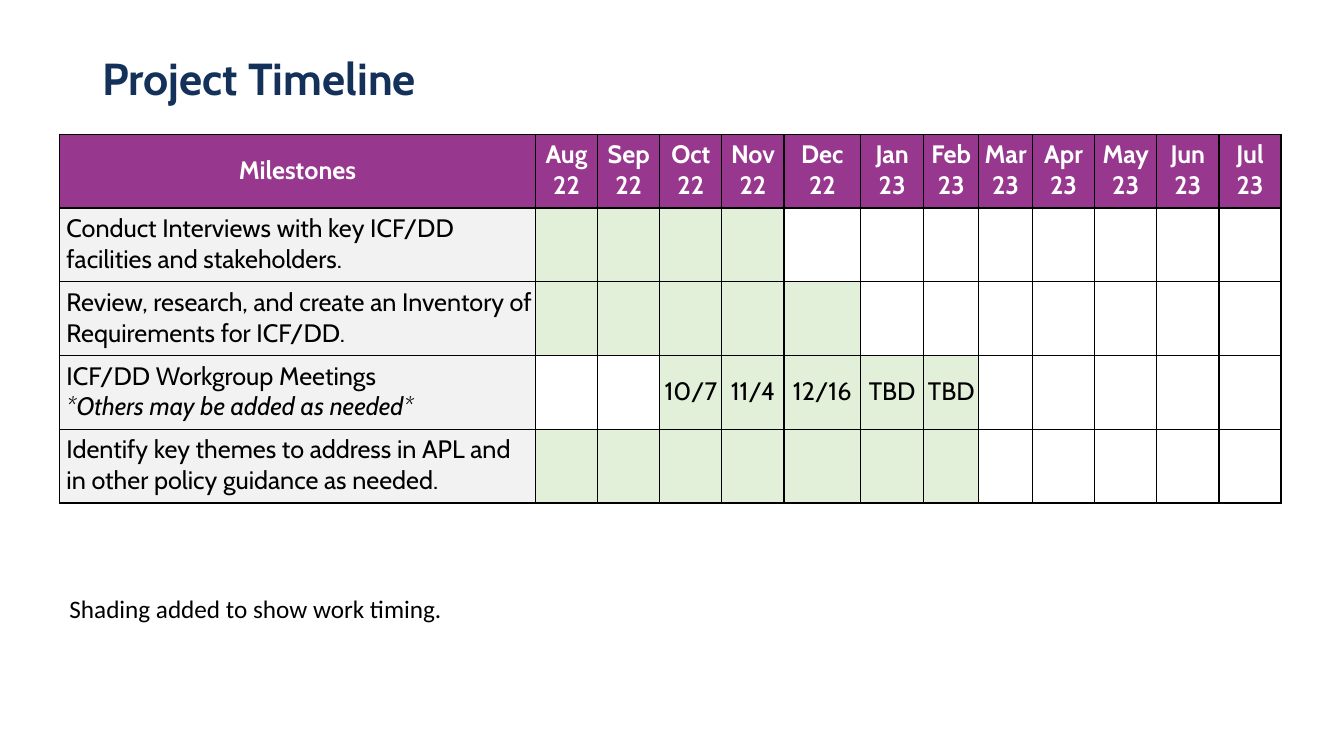
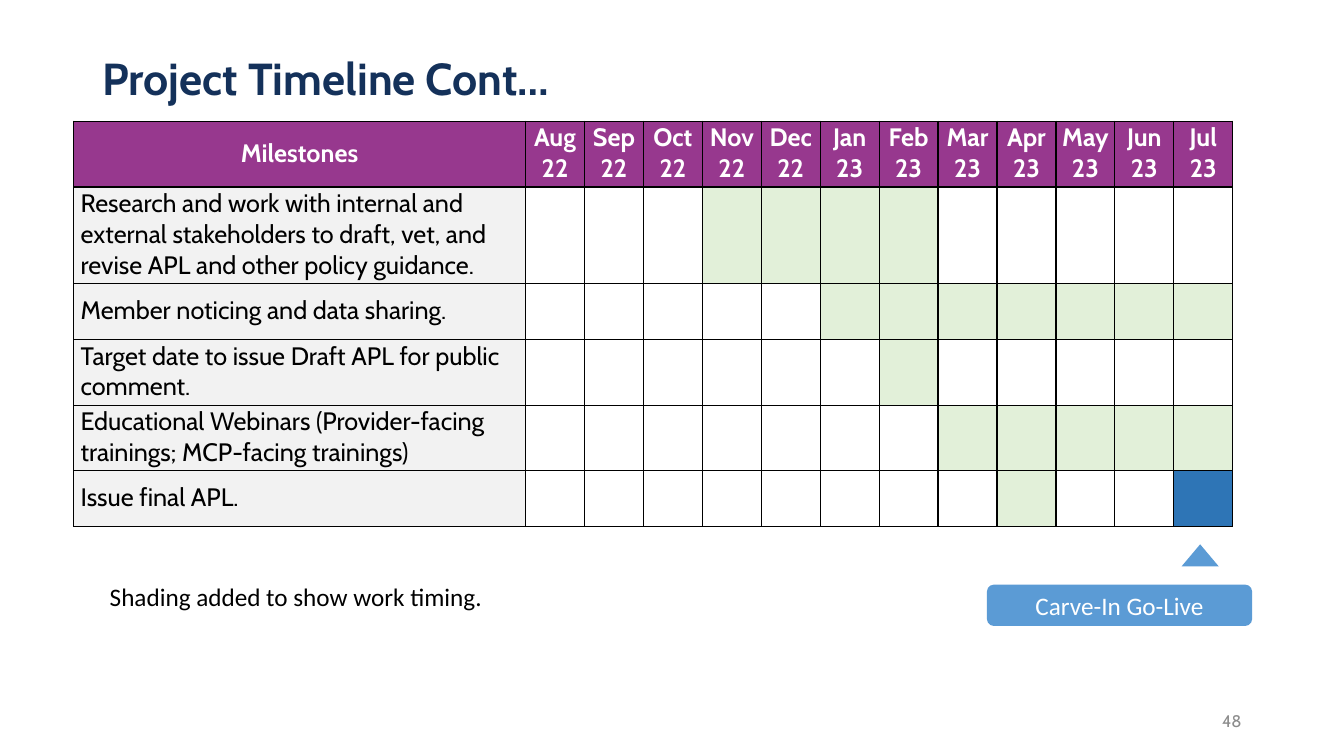
"""Build two project timeline slides with month-by-month milestone tables."""
from dataclasses import dataclass, field

from lxml import etree
from pptx import Presentation
from pptx import util as u
from pptx.dml import color
from pptx.enum import shapes, text
from pptx.oxml import ns

COLORS = {
    "title": "14315A",
    "header": "97388E",
    "label": "F2F2F2",
    "work": "E2F0D9",
    "go_live": "2E75B6",
    "callout": "5B9BD5",
    "number": "8C8C8C",
    "black": "000000",
    "white": "FFFFFF",
}
HEADING_FONT, NOTE_FONT = "Cabin", "Calibri"
TITLE_BOX = (66, 6, 828, 104)
TITLE_ONLY_LAYOUT = 5
CENTER, LEFT, RIGHT = text.PP_ALIGN.CENTER, text.PP_ALIGN.LEFT, text.PP_ALIGN.RIGHT
MIDDLE = text.MSO_ANCHOR.MIDDLE
CELL_FORMAT = {
    "margin_left": u.Pt(0.7),
    "margin_right": u.Pt(0.7),
    "margin_top": u.Pt(0.7),
    "margin_bottom": u.Pt(2),
    "vertical_anchor": MIDDLE,
}
MONTHS = [f"{month}\n22" for month in "Aug Sep Oct Nov Dec".split()]
MONTHS += [f"{month}\n23" for month in "Jan Feb Mar Apr May Jun Jul".split()]


@dataclass
class Milestone:
    """Hold one table row: label, shaded months and dated months."""
    label: str
    first: str
    last: str
    dates: dict = field(default_factory=dict)
    go_live: str = ""


FIRST_MILESTONES = [
    Milestone("Conduct Interviews with key ICF/DD facilities and stakeholders.", "Aug", "Nov"),
    Milestone("Review, research, and create an Inventory of Requirements for ICF/DD.", "Aug", "Dec"),
    Milestone("ICF/DD Workgroup Meetings\n*Others may be added as needed*", "Oct", "Feb",
              {"Oct": "10/7", "Nov": "11/4", "Dec": "12/16", "Jan": "TBD", "Feb": "TBD"}),
    Milestone("Identify key themes to address in APL and in other policy guidance as needed.",
              "Aug", "Feb"),
]
SECOND_MILESTONES = [
    Milestone("Research and work with internal and external stakeholders to draft, vet, "
              "and revise APL and other policy guidance.", "Nov", "Feb"),
    Milestone("Member noticing and data sharing.", "Jan", "Jul"),
    Milestone("Target date to issue Draft APL for public comment.", "Feb", "Feb"),
    Milestone("Educational Webinars (Provider-facing trainings; MCP-facing trainings)",
              "Mar", "Jul"),
    Milestone("Issue final APL.", "Apr", "Apr", go_live="Jul"),
]


def rgb(name):
    """Return the named colour."""
    return color.RGBColor.from_string(COLORS[name])


def points(values):
    """Convert numbers to point lengths."""
    return [u.Pt(value) for value in values]


def apply_format(target, values):
    """Set attributes from a dict of format values."""
    for name, value in values.items():
        setattr(target, name, value)


def write(frame, content, size, font, ink, alignment=LEFT, bold=False):
    """Write text into a frame, with starred lines in italics."""
    paragraph = frame.paragraphs[0]
    paragraph.alignment = alignment
    for index, line in enumerate(content.split("\n")):
        if index:
            paragraph.add_line_break()
        run = paragraph.add_run()
        run.text = line
        apply_format(run.font, {"size": u.Pt(size), "name": font, "bold": bold,
                                "italic": line.startswith("*")})
        run.font.color.rgb = rgb(ink)
    return paragraph


def add_title_slide(presentation, title):
    """Add a slide with the shared title style."""
    slide = presentation.slides.add_slide(presentation.slide_layouts[TITLE_ONLY_LAYOUT])
    shape = slide.shapes.title
    apply_format(shape, dict(zip(("left", "top", "width", "height"), points(TITLE_BOX))))
    shape.text_frame.vertical_anchor = MIDDLE
    paragraph = write(shape.text_frame, title, 32, HEADING_FONT, "title", bold=True)
    paragraph.line_spacing = 0.9
    return slide


def add_text(slide, box, content, size, font, ink, alignment=LEFT, anchor=text.MSO_ANCHOR.TOP):
    """Add a wrapped text box."""
    frame = slide.shapes.add_textbox(*points(box)).text_frame
    apply_format(frame, {"word_wrap": True, "vertical_anchor": anchor})
    write(frame, content, size, font, ink, alignment)


def add_shading_note(slide, box):
    """Add the note that explains the shading."""
    add_text(slide, box, "Shading added to show work timing.", 18, NOTE_FONT, "black")


def format_cell(cell, fill, content="", ink="black", alignment=CENTER, bold=False):
    """Give a cell its borders, fill and text."""
    apply_format(cell, CELL_FORMAT)
    properties = cell._tc.get_or_add_tcPr()
    for side in ("lnL", "lnR", "lnT", "lnB"):
        line = etree.SubElement(properties, ns.qn(f"a:{side}"), w=str(u.Pt(1)))
        solid = etree.SubElement(line, ns.qn("a:solidFill"))
        etree.SubElement(solid, ns.qn("a:srgbClr"), val=COLORS["black"])
    cell.fill.solid()
    cell.fill.fore_color.rgb = rgb(fill)
    if content:
        write(cell.text_frame, content, 18, HEADING_FONT, ink, alignment, bold)


def add_timeline(slide, origin, columns, rows, milestones):
    """Add the milestone table at its top left corner."""
    box = (*origin, sum(columns), sum(rows))
    table = slide.shapes.add_table(len(rows), len(columns), *points(box)).table
    table.horz_banding = False
    for column, width in zip(table.columns, columns):
        column.width = u.Pt(width)
    for row, height in zip(table.rows, rows):
        row.height = u.Pt(height)
    for index, heading in enumerate(["Milestones", *MONTHS]):
        format_cell(table.cell(0, index), "header", heading, "white", bold=True)
    names = [month[:3] for month in MONTHS]
    for row, milestone in enumerate(milestones, 1):
        label = table.cell(row, 0)
        format_cell(label, "label", milestone.label, alignment=LEFT)
        label.margin_left = u.Pt(5)
        active = names[names.index(milestone.first):names.index(milestone.last) + 1]
        for column, name in enumerate(names, 1):
            fill = "work" if name in active else "white"
            if name == milestone.go_live:
                fill = "go_live"
            format_cell(table.cell(row, column), fill, milestone.dates.get(name, ""))


def add_go_live_callout(slide, box):
    """Add the go-live label with its pointer, inside the given box."""
    left, top, width, height = box
    parts = [
        (shapes.MSO_SHAPE.ISOSCELES_TRIANGLE, (left + 139, top, 26.6, 15.8), ""),
        (shapes.MSO_SHAPE.ROUNDED_RECTANGLE, (left, top + 28.8, width, height - 28.8),
         "Carve-In Go-Live"),
    ]
    for kind, part_box, content in parts:
        shape = slide.shapes.add_shape(kind, *points(part_box))
        shape.shadow.inherit = False
        shape.fill.solid()
        shape.fill.fore_color.rgb = rgb("callout")
        shape.line.fill.background()
        if content:
            shape.text_frame.vertical_anchor = MIDDLE
            write(shape.text_frame, content, 18, NOTE_FONT, "white", CENTER)


def build_first_slide(presentation):
    """Build the first timeline slide."""
    slide = add_title_slide(presentation, "Project Timeline")
    columns = [340, *[44.4] * 4, 54.7, 45.1, 39.3, 38.4, *[44.4] * 4]
    add_timeline(slide, (42.5, 95.8), columns, [52.7] * 5, FIRST_MILESTONES)
    add_shading_note(slide, (42.5, 420.5, 408, 29.5))


def build_second_slide(presentation):
    """Build the second timeline slide."""
    slide = add_title_slide(presentation, "Project Timeline Cont…")
    columns = [322.8, *[42.1] * 12]
    add_timeline(slide, (52.6, 86.6), columns, [47, 69, 40, 47, 46.6, 40], SECOND_MILESTONES)
    add_go_live_callout(slide, (705, 388.8, 189.4, 58.3))
    add_shading_note(slide, (71.3, 411.8, 408, 29.5))
    add_text(slide, (678, 500.4, 216, 28.8), "48", 12, HEADING_FONT, "number", RIGHT, MIDDLE)


def main():
    """Create and save the presentation."""
    presentation = Presentation()
    apply_format(presentation, {"slide_width": u.Pt(960), "slide_height": u.Pt(540)})
    build_first_slide(presentation)
    build_second_slide(presentation)
    presentation.save("out.pptx")


if __name__ == "__main__":
    main()
